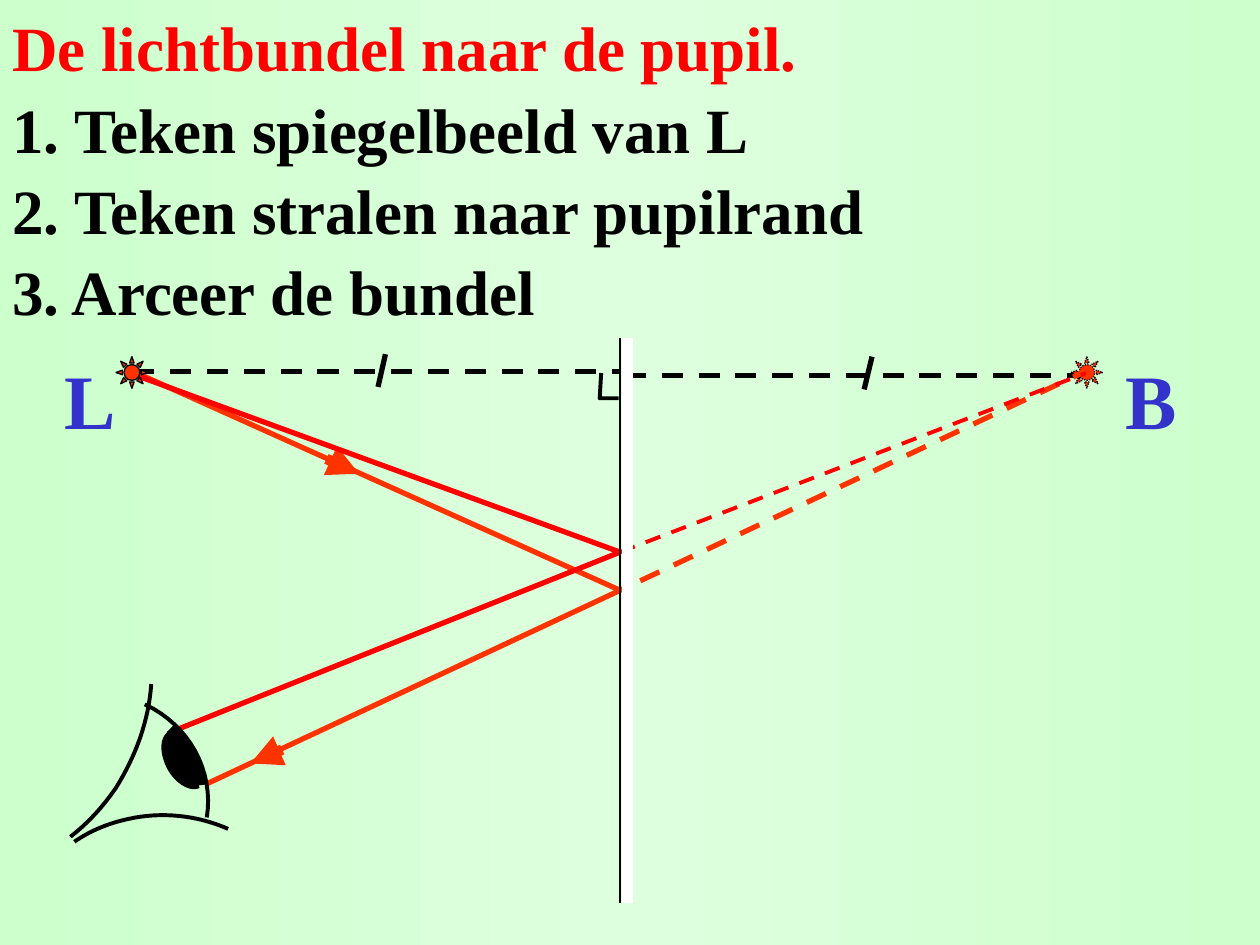
"""Build a slide on the light beam that reaches the pupil by way of a mirror."""
from lxml import etree
from pptx import Presentation
from pptx.dml.color import RGBColor
from pptx.enum.dml import MSO_LINE
from pptx.enum.shapes import MSO_CONNECTOR, MSO_SHAPE
from pptx.enum.text import MSO_ANCHOR
from pptx.oxml.ns import qn
from pptx.util import Cm, Pt

STRAIGHT = MSO_CONNECTOR.STRAIGHT
SUN = MSO_SHAPE.SUN
MIDDLE, TOP = MSO_ANCHOR.MIDDLE, MSO_ANCHOR.TOP
DASH, DOT = MSO_LINE.DASH, MSO_LINE.ROUND_DOT

BLACK = RGBColor(0x00, 0x00, 0x00)
WHITE = RGBColor(0xFF, 0xFF, 0xFF)
RED = RGBColor(0xFF, 0x00, 0x00)
ORANGE = RGBColor(0xFF, 0x33, 0x00)
BLUE = RGBColor(0x33, 0x33, 0xCC)
EDGE_GREEN = RGBColor(0xCC, 0xFF, 0xCC)
MID_GREEN = RGBColor(0xDE, 0xFF, 0xDE)

FONT = "Times New Roman"
HEADINGS = [
    ("De lichtbundel naar de pupil.", RED),
    ("1. Teken spiegelbeeld van L", BLACK),
    ("2. Teken stralen naar pupilrand", BLACK),
    ("3. Arceer de bundel", BLACK),
]
HEADING_PITCH = 1.64
MIRROR_X, MIRROR_TOP, MIRROR_BOTTOM = 12.5, 6.81, 18.21
UPPER_HIT, LOWER_HIT = (MIRROR_X, 11.13), (MIRROR_X, 11.9)
SUN_TOP, SUN_SIZE = 7.19, 0.64

CORNEA = [(2.92, 14.2), (3.81, 14.61), (4.32, 15.54), (4.17, 16.48)]
LOWER_LID = [(1.5, 16.97), (1.83, 16.74), (2.21, 16.59), (2.59, 16.51),
             (3.25, 16.36), (3.96, 16.43), (4.6, 16.71)]
UPPER_LID = [(1.42, 16.87), (1.78, 16.59), (2.08, 16.26), (2.34, 15.88),
             (2.74, 15.24), (3, 14.53), (3.05, 13.79)]
IRIS = [(4.01, 15.85), (3.84, 15.93), (3.56, 15.77), (3.4, 15.47),
        (3.25, 15.16), (3.25, 14.86), (3.45, 14.76)]
PUPIL = [(3.38, 14.76), (3.3, 15.09), (3.38, 15.47), (3.66, 15.8), (3.84, 15.88),
         (4.01, 15.82), (4.17, 15.8), (4.04, 15.34), (3.81, 14.96), (3.53, 14.61)]


def set_background(s):
    """Fill the slide with a horizontal green gradient."""
    fill = s.background.fill
    fill.gradient()
    fill.gradient_angle = 0
    first, last = fill.gradient_stops
    first.color.rgb, first.position = EDGE_GREEN, 0
    last.color.rgb, last.position = EDGE_GREEN, 1
    stops = fill._fill._gradFill.find(qn("a:gsLst"))
    middle = etree.Element(qn("a:gs"), pos="50000")
    etree.SubElement(middle, qn("a:srgbClr"), val=str(MID_GREEN))
    stops.insert(1, middle)


def add_text(s, text, left, top, width, height, size, color, anchor):
    """Add one bold line of text."""
    tf = s.shapes.add_textbox(Cm(left), Cm(top), Cm(width), Cm(height)).text_frame
    tf.word_wrap = True
    tf.vertical_anchor = anchor
    tf.text = text
    font = tf.paragraphs[0].runs[0].font
    font.name, font.size, font.bold = FONT, Pt(size), True
    font.color.rgb = color


def style_line(line, color, width, dash=None):
    """Set colour, width and dash of a line."""
    line.color.rgb = color
    line.width = Pt(width)
    if dash is not None:
        line.dash_style = dash


def add_line(s, start, end, color, width, dash=None, arrow=False):
    """Add a straight line, with an arrowhead at its end on request."""
    c = s.shapes.add_connector(STRAIGHT, *(Cm(v) for v in start + end))
    style_line(c.line, color, width, dash)
    if arrow:
        etree.SubElement(c.line._get_or_add_ln(), qn("a:tailEnd"), type="triangle")
    etree.SubElement(c._element.spPr, qn("a:effectLst"))


def add_outline(s, points, width, fill=None):
    """Add a black path through the points, closed when filled."""
    points = [(Cm(x), Cm(y)) for x, y in points]
    builder = s.shapes.build_freeform(*points[0])
    builder.add_line_segments(points[1:], close=fill is not None)
    sp = builder.convert_to_shape()
    sp.shadow.inherit = False
    style_line(sp.line, BLACK, width)
    if fill is None:
        sp.fill.background()
    else:
        sp.fill.solid()
        sp.fill.fore_color.rgb = fill


def bezier_points(controls, steps=16):
    """Return points along a chain of cubic Bézier curves."""
    points = [controls[0]]
    for i in range(0, len(controls) - 1, 3):
        a, b, c, d = controls[i:i + 4]
        for n in range(1, steps + 1):
            t = n / steps
            u = 1 - t
            points.append(tuple(
                u**3 * a[k] + 3 * u * u * t * b[k] + 3 * u * t * t * c[k] + t**3 * d[k]
                for k in (0, 1)))
    return points


def add_sun(s, left, dash=None):
    """Add a light source."""
    sp = s.shapes.add_shape(SUN, Cm(left), Cm(SUN_TOP), Cm(SUN_SIZE), Cm(SUN_SIZE))
    sp.shadow.inherit = False
    sp.fill.solid()
    sp.fill.fore_color.rgb = ORANGE
    style_line(sp.line, BLACK, 0.75, dash)


def add_eye(s):
    """Draw the eye with its lids, cornea, iris and pupil."""
    for curve in (CORNEA, LOWER_LID, UPPER_LID, IRIS):
        add_outline(s, bezier_points(curve), 2.25)
    add_outline(s, PUPIL, 0.75, BLACK)


def add_distances(s):
    """Draw the equal distances on both sides of the mirror."""
    add_line(s, (2.69, 7.49), (MIRROR_X, 7.49), BLACK, 3, DASH)
    add_line(s, (7.77, 7.14), (7.62, 7.8), BLACK, 3)
    add_line(s, (12.6, 7.57), (22.02, 7.57), BLACK, 3, DASH)
    add_line(s, (17.58, 7.19), (17.42, 7.85), BLACK, 3)
    add_outline(s, [(12.12, 7.52), (12.09, 8.03), (12.47, 8.03)], 2.25)


def add_rays(s):
    """Draw the two rays from L to the eye and their extensions to B."""
    add_line(s, (2.87, 7.57), LOWER_HIT, ORANGE, 3)
    add_line(s, (6.58, 9.25), (7.24, 9.55), ORANGE, 6, arrow=True)
    add_line(s, LOWER_HIT, (4.17, 15.8), ORANGE, 3)
    add_line(s, (5.69, 15.11), (5.05, 15.39), ORANGE, 6, arrow=True)
    add_line(s, (22.02, 7.42), LOWER_HIT, ORANGE, 3, DASH)
    add_line(s, (3.51, 14.73), UPPER_HIT, RED, 3)
    add_line(s, UPPER_HIT, (21.89, 7.52), RED, 2.25, DASH)
    add_line(s, (2.67, 7.54), UPPER_HIT, RED, 3)


def add_mirror(s):
    """Draw the mirror surface and its back."""
    for x, color, width in ((MIRROR_X, BLACK, 0.75), (MIRROR_X + 0.15, WHITE, 6)):
        add_line(s, (x, MIRROR_TOP), (x, MIRROR_BOTTOM), color, width)


def main():
    """Build and save the slide."""
    prs = Presentation()
    prs.slide_width, prs.slide_height = Cm(25.4), Cm(19.05)
    s = prs.slides.add_slide(prs.slide_layouts[6])
    set_background(s)
    for i, (text, color) in enumerate(HEADINGS):
        add_text(s, text, 0, 0.14 + i * HEADING_PITCH, 25.4, 1.6, 36, color, MIDDLE)
    add_distances(s)
    add_sun(s, 21.59, DOT)
    add_rays(s)
    for text, left in (("L", 1.06), ("B", 22.43)):
        add_text(s, text, left, 6.99, 1.7, 2.11, 44, BLUE, TOP)
    add_mirror(s)
    add_sun(s, 2.34)
    add_eye(s)
    prs.save("out.pptx")


if __name__ == "__main__":
    main()
